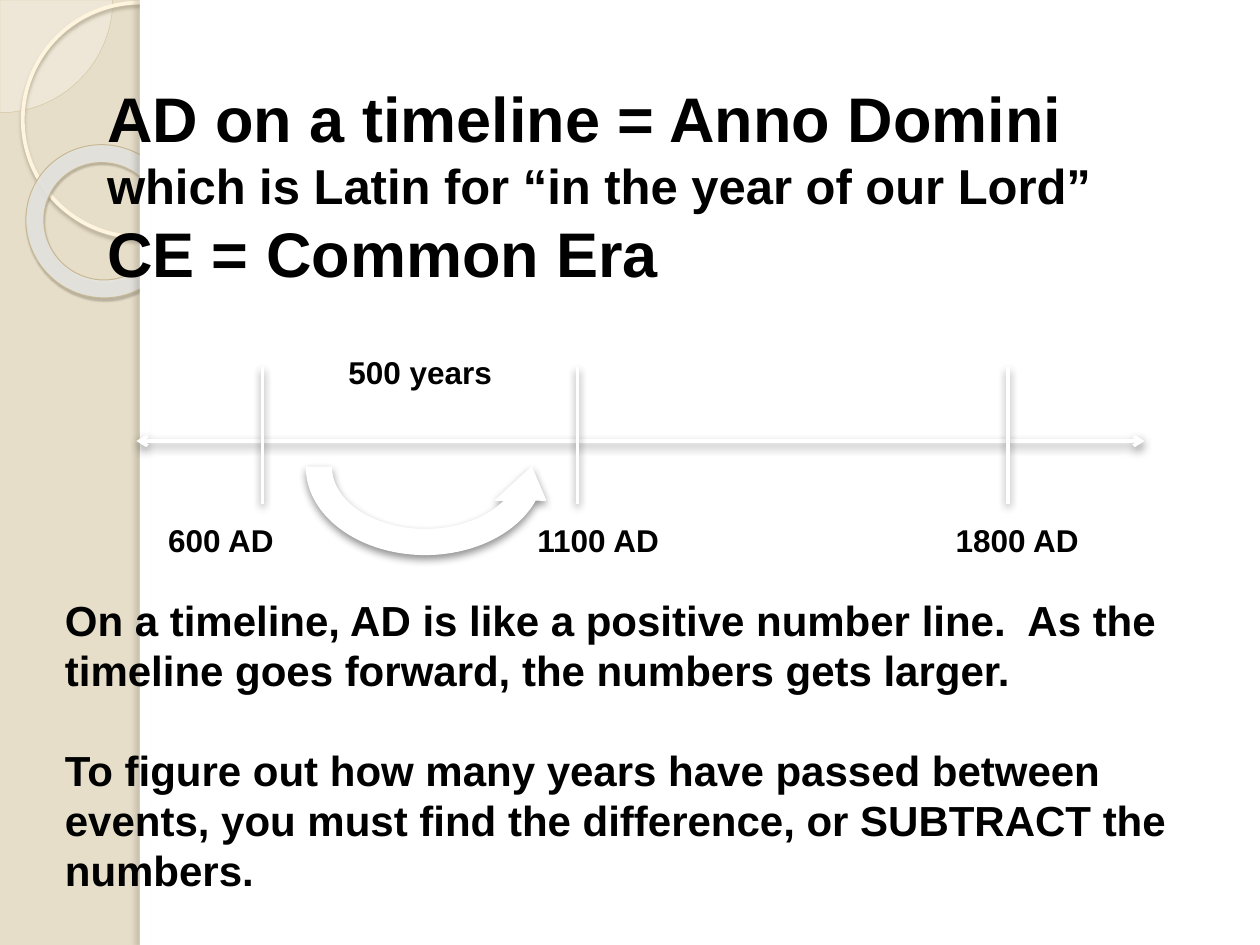
from lxml import etree
from pptx import Presentation
from pptx.dml.color import RGBColor
from pptx.enum.shapes import MSO_CONNECTOR, MSO_SHAPE
from pptx.enum.text import MSO_ANCHOR, MSO_AUTO_SIZE, PP_ALIGN
from pptx.oxml.ns import qn
from pptx.util import Pt

STRAIGHT = MSO_CONNECTOR.STRAIGHT
PIE, OVAL, DONUT = MSO_SHAPE.PIE, MSO_SHAPE.OVAL, MSO_SHAPE.DONUT
RECTANGLE, CURVED_ARROW = MSO_SHAPE.RECTANGLE, MSO_SHAPE.CIRCULAR_ARROW
TOP, LEFT, NO_FIT = MSO_ANCHOR.TOP, PP_ALIGN.LEFT, MSO_AUTO_SIZE.NONE

FONT = "Arial"
COLORS = {
    "sand": "E7DEC9", "white": "FFFFFF", "text": "000000",
    "pie": "FEFAF4", "pie line": "D3C39F",
    "circle": "FFF5DE", "circle shadow": "B0A68F",
    "ring": "E6E5E1", "ring line": "C7B893", "ring shadow": "5A5444",
    "panel shadow": "736F63",
}
# Shadows: colour, opacity %, blur, distance, direction in degrees
LINE_SHADOW = ("text", 43, 5, 2, 90)


def color(name):
    return RGBColor.from_string(COLORS[name])


def set_alpha(node, percent):
    etree.SubElement(node, qn("a:alpha"), val=str(percent * 1000))


def add_shadow(shape, shadow=None):
    """Replace the theme shadow; without settings there is none."""
    properties = shape._element.spPr
    for old in properties.findall(qn("a:effectLst")):
        properties.remove(old)
    effects = etree.SubElement(properties, qn("a:effectLst"))
    if shadow:
        name, opacity, blur, distance, degrees = shadow
        outer = etree.SubElement(
            effects, qn("a:outerShdw"), blurRad=str(Pt(blur)),
            dist=str(Pt(distance)), dir=str(degrees * 60000),
            algn="tl", rotWithShape="0")
        set_alpha(etree.SubElement(outer, qn("a:srgbClr"),
                                   val=COLORS[name]), opacity)


def add_shape(page, kind, box, fill=None, alpha=None, line=None, shadow=None):
    shape = page.shapes.add_shape(kind, *map(Pt, box))
    if fill:
        shape.fill.solid()
        shape.fill.fore_color.rgb = color(fill)
        if alpha:
            set_alpha(shape._element.spPr.find(
                qn("a:solidFill") + "/" + qn("a:srgbClr")), alpha)
    else:
        shape.fill.background()
    if line:
        shape.line.color.rgb = color(line[0])
        shape.line.width = Pt(line[1])
    else:
        shape.line.fill.background()
    add_shadow(shape, shadow)
    return shape


def add_line(page, start, end, arrows=False):
    line = page.shapes.add_connector(STRAIGHT, *map(Pt, start + end))
    line.line.color.rgb = color("white")
    line.line.width = Pt(2)
    if arrows:
        outline = line.line._get_or_add_ln()
        for tag in ("a:headEnd", "a:tailEnd"):
            etree.SubElement(outline, qn(tag), type="arrow")
    add_shadow(line, LINE_SHADOW)


def write(shape, paragraphs, gap=0):
    """Fill a shape with (text, size) paragraphs, set apart by gap points."""
    frame = shape.text_frame
    frame.word_wrap = True
    frame.auto_size = NO_FIT
    frame.vertical_anchor = TOP
    for index, (text, size) in enumerate(paragraphs):
        para = frame.add_paragraph() if index else frame.paragraphs[0]
        para.alignment = LEFT
        para.space_before = Pt(gap if index else 0)
        span = para.add_run()
        span.text = text
        span.font.name = FONT
        span.font.size = Pt(size)
        span.font.bold = True
        span.font.color.rgb = color("text")


def add_text(page, box, paragraphs, gap=0):
    write(page.shapes.add_textbox(*map(Pt, box)), paragraphs, gap)


def add_backdrop(page, box):
    """Sand margin with rings, partly covered by the white panel."""
    left, top, width, height = box
    page.background.fill.solid()
    page.background.fill.fore_color.rgb = color("sand")
    pie = add_shape(page, PIE, (left - 64.4, top - 64.4, 128.8, 128.8),
                    "pie", 33, ("pie line", 0.25))
    pie.adjustments[0], pie.adjustments[1] = 0, 54
    add_shape(page, OVAL, (left + 13, top + 1.5, 134, 134),
              line=("circle", 2.15), shadow=("circle shadow", 85, 2, 2, 90))
    ring = add_shape(page, DONUT, (left + 14.5, top + 83, 88.5, 87),
                     "ring", 90, ("ring line", 0.58),
                     ("ring shadow", 35, 1, 1.2, 75))
    ring.rotation = 38.6
    ring.adjustments[0] = 0.118
    margin = 80
    add_shape(page, RECTANGLE, (left + margin, top, width - margin, height), "white")
    add_shape(page, RECTANGLE, (left + margin, top, 6, height), "white",
              shadow=("panel shadow", 25, 3, 3, 180))


def add_title(page, box):
    title = page.shapes.title
    title.left, title.top, title.width, title.height = map(Pt, box)
    write(title, [("AD on a timeline = Anno Domini", 36),
                  ("which is Latin for “in the year of our Lord”", 28),
                  ("CE = Common Era", 36)])
    page.shapes._spTree.append(title._element)  # in front of the panel


def add_timeline(page, box):
    """Axis with dated ticks and the jump between the first two."""
    left, top, width, height = box
    axis = top + 54
    add_line(page, (left, axis), (left + width, axis), arrows=True)
    # Tick offset, label offset, label
    for tick, label, text in ((72, 6, " 600 AD"), (252, 222, "1100 AD"),
                              (498, 456, " 1800 AD")):
        add_line(page, (left + tick, top + 12), (left + tick, top + 90))
        add_text(page, (left + label, top + 96, 96, 30), [(text, 18)])
    jump = add_shape(page, CURVED_ARROW, (left + 90, top + 12, 150, 114),
                     "white", line=("white", 0.75), shadow=LINE_SHADOW)
    jump._element.spPr.find(qn("a:xfrm")).set("flipV", "1")
    add_text(page, (left + 114, top, 102, 29), [("500 years", 18)])


def add_explanation(page, box):
    add_text(page, box, [
        ("On a timeline, AD is like a positive number line.  As the "
         "timeline goes forward, the numbers gets larger.", 24),
        ("To figure out how many years have passed between events, you must "
         "find the difference, or SUBTRACT the numbers.", 24)], gap=28)


def main():
    deck = Presentation()
    deck.slide_width, deck.slide_height = Pt(720), Pt(540)
    page = deck.slides.add_slide(deck.slide_layouts[5])
    add_backdrop(page, (0, 0, 720, 540))
    add_title(page, (54, 42, 642, 128))
    add_timeline(page, (78, 198, 576, 126))
    add_explanation(page, (30, 336, 672, 204))
    deck.save("out.pptx")


if __name__ == "__main__":
    main()
